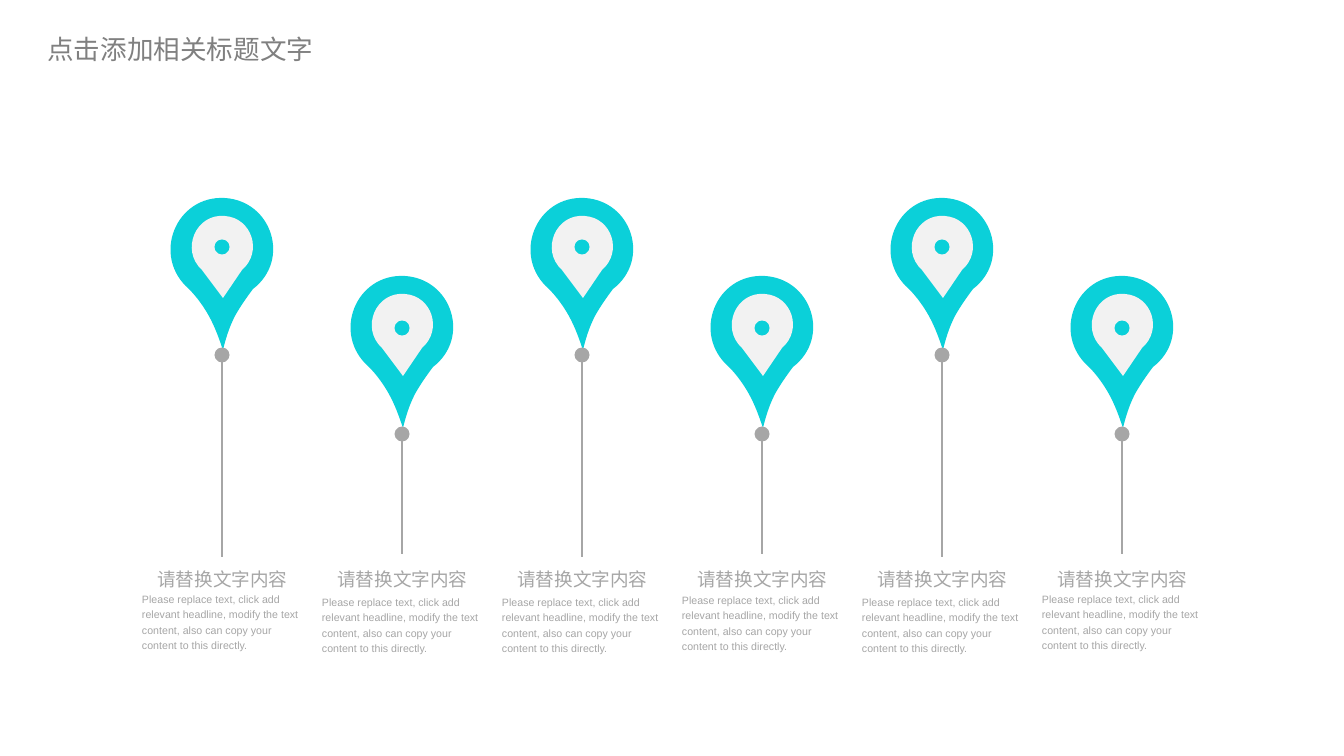
"""Build a slide with six map pins on stems, each with a heading and a short text."""
from lxml.etree import SubElement
from pptx import Presentation
from pptx.dml.color import RGBColor
from pptx.enum.shapes import MSO_CONNECTOR, MSO_SHAPE
from pptx.enum.text import MSO_ANCHOR, MSO_AUTO_SIZE, PP_ALIGN
from pptx.oxml.ns import qn
from pptx.util import Pt

TITLE = "点击添加相关标题文字"
HEADING = "请替换文字内容"
BODY = ("Please replace text, click add relevant headline, modify the text "
        "content, also can copy your content to this directly.")

HIGH = {"top": 198, "eye": 247, "joint": 355, "stem": 353, "foot": 557}
LOW = {"top": 276, "eye": 328, "joint": 434, "stem": 441, "foot": 554}
PINS = [(HIGH, 591), (LOW, 594), (HIGH, 594), (LOW, 592), (HIGH, 594), (LOW, 591)]
FIRST_X, PITCH, DOT = 222, 180, 15

DROP_BOX = (-51, 0, 102, 152)
DROP = [[(-33, 91)],
        [(-71, 58), (-46, -3), (3, 0)],
        [(50, 3), (69, 62), (31, 91)],
        [(25, 99), (18, 109), (13, 118)],
        [(7, 130), (4, 140), (1, 152)],
        [(-3, 140), (-7, 129), (-13, 118)],
        [(-18, 109), (-25, 99), (-33, 91)]]
CORE_BOX = (-30, 18, 61, 82)
CORE = [[(20, 72)],
        [(41, 54), (30, 20), (3, 18)],
        [(-26, 15), (-42, 52), (-20, 72)],
        [(1, 100)],
        [(20, 72)]]

CYAN = RGBColor(0x0B, 0xD0, 0xD9)
PALE = RGBColor(0xF2, 0xF2, 0xF2)
GREY = RGBColor(0xA6, 0xA6, 0xA6)
TITLE_GREY = RGBColor(0x80, 0x80, 0x80)
LATIN, CJK = "Arial", "Noto Sans CJK SC"
PX = 9565


def px(n):
    return round(n * PX)


def paint(sp, color):
    sp.shadow.inherit = False
    sp.fill.solid()
    sp.fill.fore_color.rgb = color
    sp.line.fill.background()


def add_outline(shapes, outline, box, x, y, color):
    """Build a freeform over its box, then set its lines and cubic curves."""
    left, top, w, h = box
    builder = shapes.build_freeform(0, 0, scale=PX)
    builder.add_line_segments([(w, 0), (w, h), (0, h)], close=True)
    sp = builder.convert_to_shape(px(x + left), px(y + top))
    paint(sp, color)
    track = next(sp._element.iter(qn("a:path")))
    for child in list(track):
        track.remove(child)
    for i, points in enumerate(outline):
        tag = "a:moveTo" if i == 0 else "a:cubicBezTo" if len(points) == 3 else "a:lnTo"
        step = SubElement(track, qn(tag))
        for dx, dy in points:
            SubElement(step, qn("a:pt"), x=str(dx - left), y=str(dy - top))
    SubElement(track, qn("a:close"))


def add_dot(shapes, x, y, color):
    sp = shapes.add_shape(MSO_SHAPE.OVAL, px(x - DOT / 2), px(y - DOT / 2), px(DOT), px(DOT))
    paint(sp, color)


def add_stem(shapes, x, top, foot):
    line = shapes.add_connector(MSO_CONNECTOR.STRAIGHT, px(x), px(foot), px(x), px(top))
    line.line.color.rgb = GREY
    line.line.width = Pt(1)
    SubElement(line._element.spPr, qn("a:effectLst"))


def add_text(shapes, text, box, size, color, font, wrap=True):
    tf = shapes.add_textbox(*map(px, box)).text_frame
    tf.word_wrap = wrap
    p = tf.paragraphs[0]
    r = p.add_run()
    r.text = text
    r.font.size = Pt(size)
    r.font.name = font
    r.font.color.rgb = color
    return tf, p


def add_label(shapes, text, box, size, align, wrap):
    tf, p = add_text(shapes, text, box, size, GREY, LATIN, wrap)
    tf.margin_left = tf.margin_right = tf.margin_top = tf.margin_bottom = 0
    tf.vertical_anchor = MSO_ANCHOR.MIDDLE
    tf.auto_size = MSO_AUTO_SIZE.SHAPE_TO_FIT_TEXT
    p.line_spacing = 1.2
    p.alignment = align


def add_pin(shapes, x, level, body_top):
    add_stem(shapes, x, level["stem"], level["foot"])
    add_outline(shapes, DROP, DROP_BOX, x, level["top"], CYAN)
    add_outline(shapes, CORE, CORE_BOX, x, level["top"], PALE)
    add_dot(shapes, x, level["joint"], GREY)
    add_dot(shapes, x, level["eye"], CYAN)
    add_label(shapes, HEADING, (x - 65, 564, 131, 25), 14, PP_ALIGN.CENTER, False)
    add_label(shapes, BODY, (x - 80, body_top, 161, 60), 8, PP_ALIGN.LEFT, True)


def main():
    prs = Presentation()
    prs.slide_width, prs.slide_height = px(1344), px(756)
    s = prs.slides.add_slide(prs.slide_layouts[6])
    for i, (level, body_top) in enumerate(PINS):
        group = s.shapes.add_group_shape()
        add_pin(group.shapes, FIRST_X + i * PITCH, level, body_top)
    add_text(s.shapes, TITLE, (38, 28, 320, 39), 20, TITLE_GREY, CJK)
    prs.save("out.pptx")


if __name__ == "__main__":
    main()
